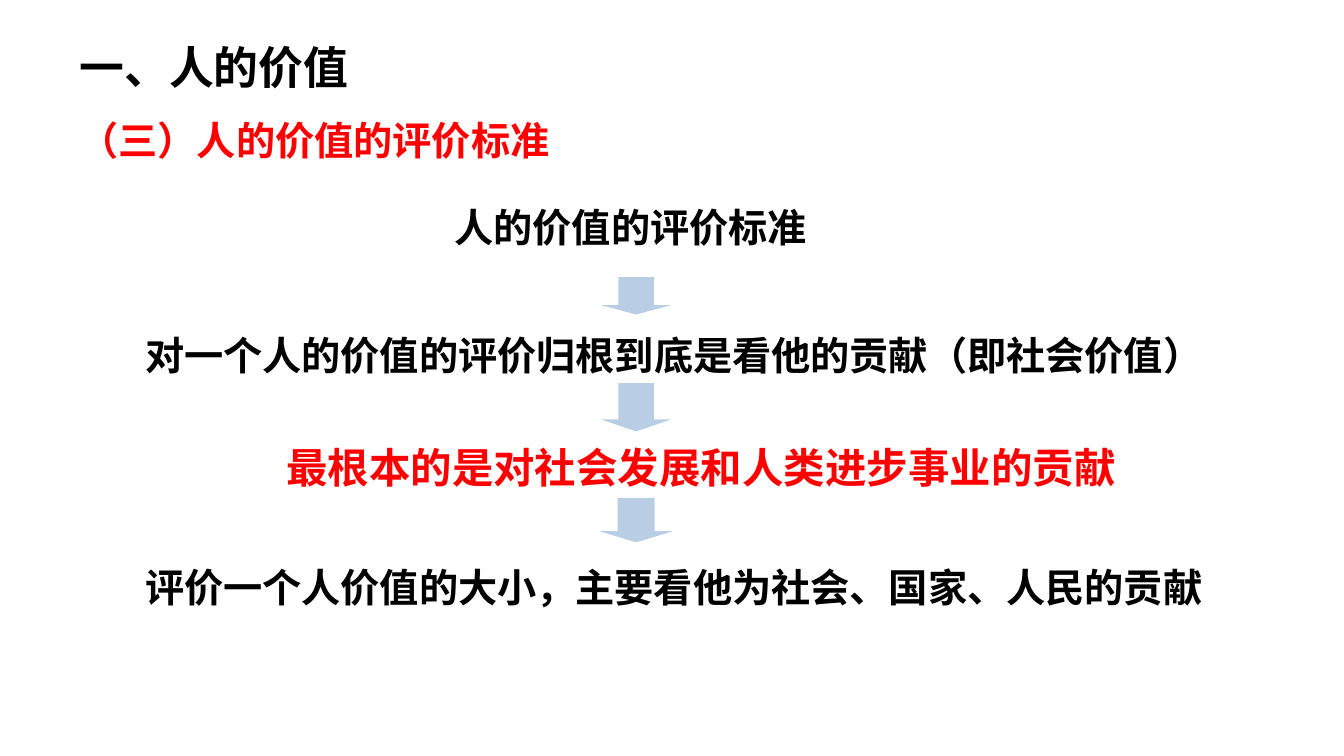
from lxml.etree import SubElement
from pptx import Presentation
from pptx.dml.color import RGBColor
from pptx.enum.shapes import MSO_SHAPE as SHAPE
from pptx.enum.text import MSO_AUTO_SIZE as AUTO_SIZE
from pptx.oxml.ns import qn
from pptx.util import Inches, Pt

BLACK = RGBColor(0x00, 0x00, 0x00)
RED = RGBColor(0xFF, 0x00, 0x00)
PALE_BLUE = RGBColor(0xB9, 0xCD, 0xE5)
FONT = "Noto Sans CJK SC"

# Text, box (left, top, width, height), size, colour, line spacing, wrap
HEADINGS = [
    ("一、人的价值", (0.69, 0.34, 2.94, 0.64), 32, BLACK, None, True),
    ("（三）人的价值的评价标准", (0.69, 1.1, 4.91, 0.57), 28, RED, None, False),
]
STEPS = [
    ("人的价值的评价标准", (4.41, 1.97, 4.07, 0.57), 28, BLACK, None, True),
    ("对一个人的价值的评价归根到底是看他的贡献（即社会价值）",
     (1.34, 3, 10.91, 0.81), 28, BLACK, 1.5, True),
    ("最根本的是对社会发展和人类进步事业的贡献",
     (2.74, 4.09, 8.78, 0.85), 29.6, RED, 1.5, True),
    ("评价一个人价值的大小，主要看他为社会、国家、人民的贡献",
     (1.34, 5.31, 10.76, 0.81), 28, BLACK, 1.5, False),
]

# Arrows share one centre line: top, width, height
ARROW_CENTRE = 6.31
ARROWS = [(2.75, 0.7, 0.37), (3.8, 0.7, 0.48), (4.94, 0.73, 0.44)]


def add_text(s, text, box, size, color, spacing, wrap):
    tf = s.shapes.add_textbox(*map(Inches, box)).text_frame
    tf.word_wrap = wrap
    tf.auto_size = AUTO_SIZE.SHAPE_TO_FIT_TEXT
    p = tf.paragraphs[0]
    p.line_spacing = spacing
    r = p.add_run()
    r.text = text
    for name, value in {"name": FONT, "size": Pt(size), "bold": True}.items():
        setattr(r.font, name, value)
    r.font.color.rgb = color
    # East Asian typeface
    SubElement(r._r.get_or_add_rPr(), qn("a:ea"), typeface=FONT)


def add_down_arrow(s, top, width, height):
    box = (ARROW_CENTRE - width / 2, top, width, height)
    sp = s.shapes.add_shape(SHAPE.DOWN_ARROW, *map(Inches, box))
    sp.adjustments[0] = 0.5
    sp.adjustments[1] = 0.25
    sp.shadow.inherit = False
    sp.fill.solid()
    sp.fill.fore_color.rgb = PALE_BLUE
    sp.line.fill.background()


def main():
    prs = Presentation()
    prs.slide_width = Inches(13.33)
    prs.slide_height = Inches(7.5)
    s = prs.slides.add_slide(prs.slide_layouts[6])

    # Arrows lie behind the text
    for arrow in ARROWS:
        add_down_arrow(s, *arrow)

    # Headings, then the chain of statements
    for item in HEADINGS + STEPS:
        add_text(s, *item)

    prs.save("out.pptx")


if __name__ == "__main__":
    main()
